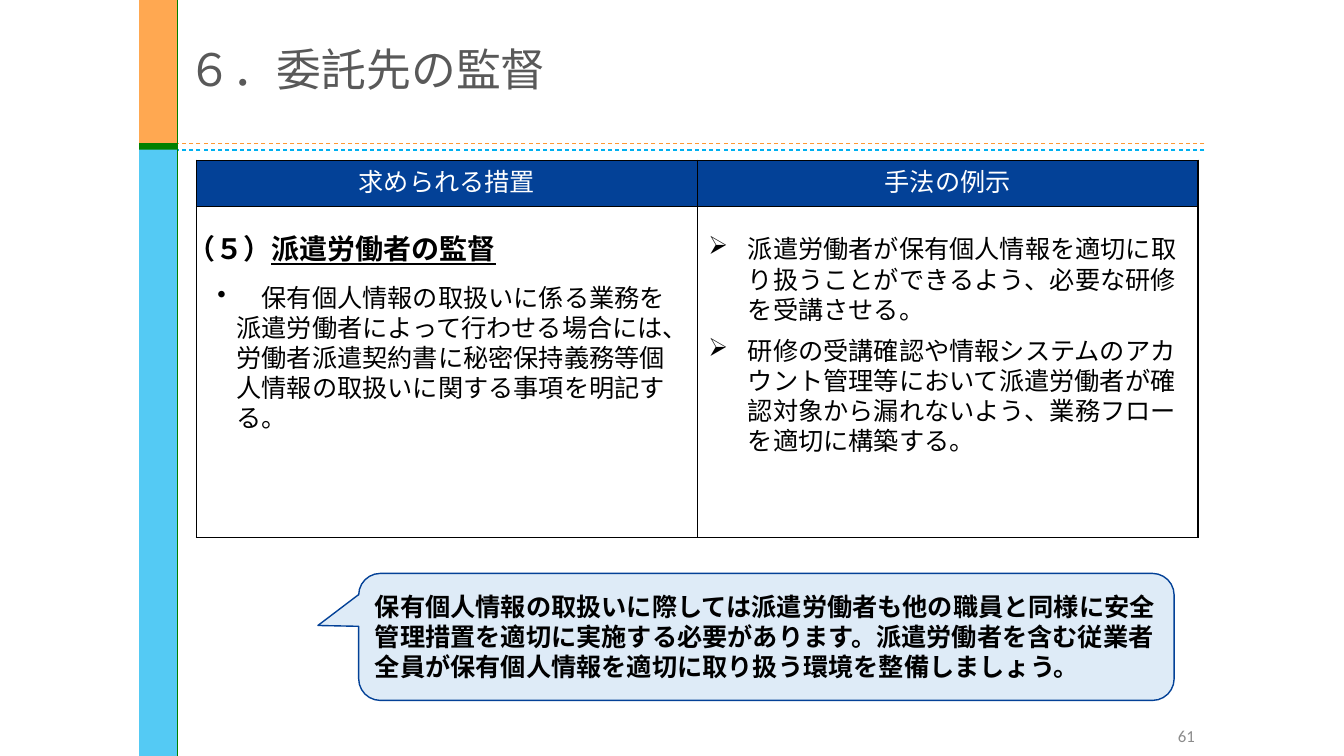
from lxml.etree import SubElement
from pptx import Presentation
from pptx.dml.color import RGBColor
from pptx.enum.dml import MSO_LINE
from pptx.enum.shapes import MSO_CONNECTOR, MSO_SHAPE
from pptx.enum.text import MSO_ANCHOR, PP_ALIGN
from pptx.oxml.ns import qn
from pptx.util import Cm, Pt

SKY = RGBColor(0x00, 0xB0, 0xF0)
ORANGE = RGBColor(0xFF, 0x99, 0x33)
GREEN = RGBColor(0x00, 0x80, 0x00)
NAVY = RGBColor(0x03, 0x41, 0x97)
PALE_BLUE = RGBColor(0xDE, 0xEB, 0xF7)
BLACK = RGBColor(0, 0, 0)
WHITE = RGBColor(0xFF, 0xFF, 0xFF)
TITLE_GREY = RGBColor(0x59, 0x59, 0x59)
NUMBER_GREY = RGBColor(0x8C, 0x8C, 0x8C)
JAPANESE = "Noto Sans CJK JP"

deck = Presentation()
deck.slide_width, deck.slide_height = Cm(33.87), Cm(19.05)
page = deck.slides.add_slide(deck.slide_layouts[6])


def write(para, text, size=18, color=BLACK, font=JAPANESE, bold=False, underline=False,
          align=PP_ALIGN.LEFT, spacing=Pt(21.5), after=0, bullet=None, left=0, hanging=0):
    para.alignment = align
    para.line_spacing = spacing
    para.space_after = Pt(after)
    span = para.add_run()
    span.text = text
    span.font.name = font
    span.font.size = Pt(size)
    span.font.bold = bold
    span.font.underline = underline
    span.font.color.rgb = color
    SubElement(span.font._element, qn("a:ea"), typeface=font)
    if bullet:
        properties = para._p.get_or_add_pPr()
        properties.set("marL", str(Cm(left)))
        properties.set("indent", str(-Cm(hanging)))
        SubElement(properties, qn("a:buChar"), char=bullet)


def add_box(left, top, width, height, anchor=MSO_ANCHOR.TOP):
    frame = page.shapes.add_textbox(Cm(left), Cm(top), Cm(width), Cm(height)).text_frame
    frame.word_wrap = True
    frame.vertical_anchor = anchor
    return frame


# Title
title = add_box(4.47, 0, 25.88, 3.61, MSO_ANCHOR.MIDDLE)
write(title.paragraphs[0], "６．委託先の監督", size=32, color=TITLE_GREY, spacing=0.9)

# Side bands
for top, height, color, opacity in [
    (3.74, 15.31, SKY, 67), (0, 3.74, ORANGE, 85), (3.61, 0.16, GREEN, 100),
]:
    band = page.shapes.add_shape(MSO_SHAPE.RECTANGLE, Cm(3.51), Cm(top), Cm(0.96), Cm(height))
    band.shadow.inherit = False
    band.line.fill.background()
    band.fill.solid()
    band.fill.fore_color.rgb = color
    if opacity < 100:
        tint = band._element.spPr.find(".//" + qn("a:srgbClr"))
        SubElement(tint, qn("a:alpha"), val=str(opacity * 1000))

# Rules beside the bands
for start_x, start_y, end_x, end_y, color, width, dash in [
    (30.35, 3.61, 4.47, 3.61, ORANGE, 0.75, MSO_LINE.DASH),
    (30.35, 3.78, 4.47, 3.78, SKY, 0.75, MSO_LINE.DASH),
    (4.47, 0, 4.47, 19.05, GREEN, 1, None),
]:
    rule = page.shapes.add_connector(
        MSO_CONNECTOR.STRAIGHT, Cm(start_x), Cm(start_y), Cm(end_x), Cm(end_y))
    rule.line.color.rgb = color
    rule.line.width = Pt(width)
    rule.line.dash_style = dash
    SubElement(rule._element.spPr, qn("a:effectLst"))

# Page number
number = add_box(24.16, 18.03, 6.2, 1.02, MSO_ANCHOR.MIDDLE)
write(number.paragraphs[0], "61", size=12, color=NUMBER_GREY, font="Calibri",
      align=PP_ALIGN.RIGHT, spacing=1.0)

# Table
table = page.shapes.add_table(2, 2, Cm(4.95), Cm(4.04), Cm(25.24), Cm(9.5)).table
table.rows[0].height, table.rows[1].height = Cm(1.17), Cm(8.33)
for cell in table.iter_cells():
    for side in ("a:lnL", "a:lnR", "a:lnT", "a:lnB"):
        border = SubElement(cell._tc.get_or_add_tcPr(), qn(side), w=str(Pt(1)))
        SubElement(SubElement(border, qn("a:solidFill")), qn("a:srgbClr"), val=str(BLACK))
    cell.fill.solid()
    cell.fill.fore_color.rgb = WHITE
for column, heading in enumerate(["求められる措置", "手法の例示"]):
    cell = table.cell(0, column)
    cell.fill.fore_color.rgb = NAVY
    cell.vertical_anchor = MSO_ANCHOR.MIDDLE
    write(cell.text_frame.paragraphs[0], heading, color=WHITE, align=PP_ALIGN.CENTER)

# Required measures
measures = add_box(4.47, 5.72, 13.13, 4.62)
heading = measures.paragraphs[0]
for text, underline in [("（５）", False), ("派遣労働者の監督", True)]:
    write(heading, text, size=20, bold=True, underline=underline, spacing=Pt(24), after=12)
write(measures.add_paragraph(),
      "　保有個人情報の取扱いに係る業務を派遣労働者によって行わせる場合には、"
      "労働者派遣契約書に秘密保持義務等個人情報の取扱いに関する事項を明記する。",
      bullet="•", left=1.24, hanging=0.48)

# Example methods
methods = add_box(17.6, 5.77, 12.57, 6.99)
for index, text in enumerate([
    "派遣労働者が保有個人情報を適切に取り扱うことができるよう、必要な研修を受講させる。",
    "研修の受講確認や情報システムのアカウント管理等において派遣労働者が"
    "確認対象から漏れないよう、業務フローを適切に構築する。",
]):
    para = methods.add_paragraph() if index else methods.paragraphs[0]
    write(para, text, after=8, bullet="➢", left=1, hanging=1)

# Callout
callout = page.shapes.add_shape(
    MSO_SHAPE.ROUNDED_RECTANGULAR_CALLOUT, Cm(9.04), Cm(14.45), Cm(20.55), Cm(3.2))
callout.shadow.inherit = False
for index, value in enumerate([-0.55, -0.09, 0.17]):
    callout.adjustments[index] = value
callout.fill.solid()
callout.fill.fore_color.rgb = PALE_BLUE
callout.line.color.rgb = NAVY
callout.line.width = Pt(1)
callout.text_frame.word_wrap = True
callout.text_frame.vertical_anchor = MSO_ANCHOR.MIDDLE
write(callout.text_frame.paragraphs[0],
      "保有個人情報の取扱いに際しては派遣労働者も他の職員と同様に安全管理措置を"
      "適切に実施する必要があります。派遣労働者を含む従業者全員が保有個人情報を"
      "適切に取り扱う環境を整備しましょう。", bold=True)

deck.save("out.pptx")
